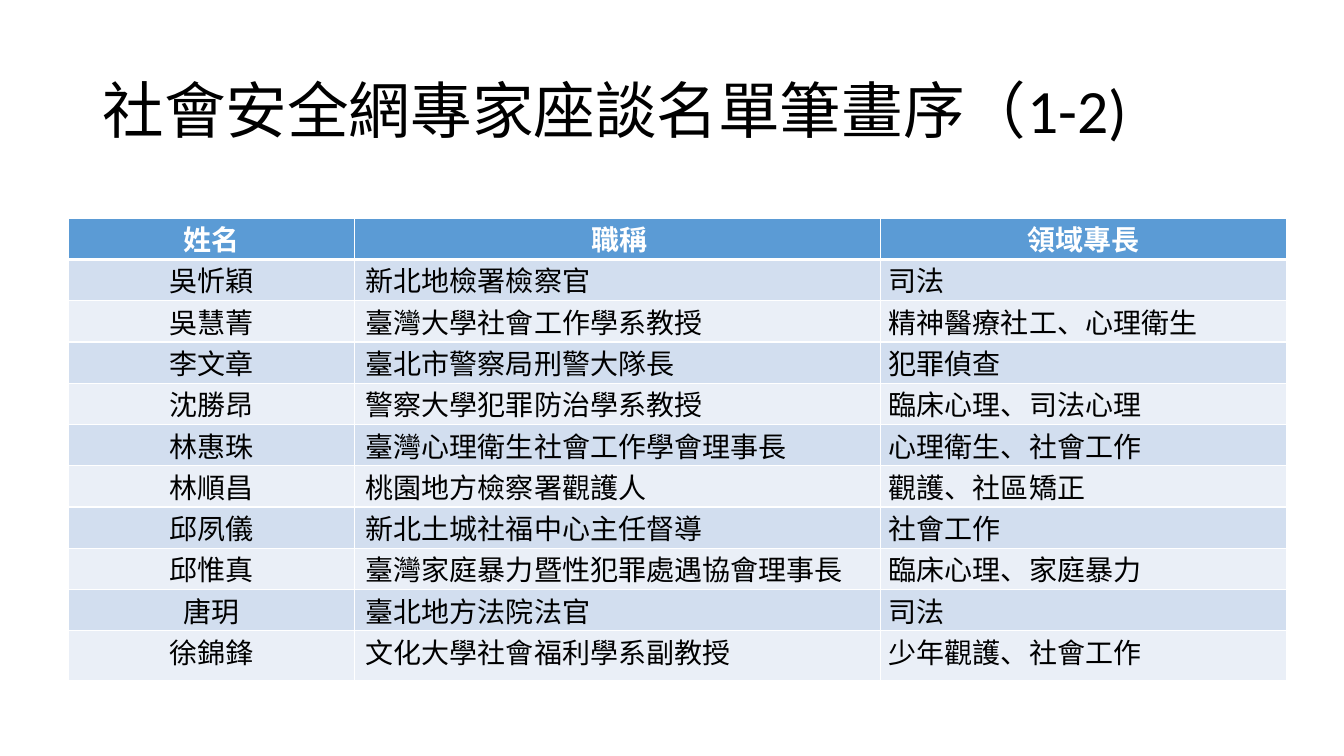
from typing import NamedTuple

from lxml import etree
from pptx import Presentation
from pptx import util as u
from pptx.dml.color import RGBColor
from pptx.enum import text
from pptx.oxml.ns import qn

TITLE = "社會安全網專家座談名單筆畫序（1-2)"
TABLE_FONT = "Noto Sans CJK SC"
WHITE, BLACK, HEADER_BLUE = "FFFFFF", "000000", "5B9BD5"
BANDS = ("D2DEEF", "EAEFF7")
ROW_HEIGHT, LAST_ROW_HEIGHT = 29.5, 35.3


class Column(NamedTuple):
    heading: str
    width: float
    indent: float
    align: text.PP_ALIGN


class Expert(NamedTuple):
    name: str
    post: str
    field: str


COLUMNS = (
    Column("姓名", 203.8, 0, text.PP_ALIGN.CENTER),
    Column("職稱", 375.8, 2.9, text.PP_ALIGN.LEFT),
    Column("領域專長", 290.2, 0.7, text.PP_ALIGN.LEFT),
)
EXPERTS = (
    Expert("吳忻穎", "新北地檢署檢察官", "司法"),
    Expert("吳慧菁", "臺灣大學社會工作學系教授", "精神醫療社工、心理衛生"),
    Expert("李文章", "臺北市警察局刑警大隊長", "犯罪偵查"),
    Expert("沈勝昂", "警察大學犯罪防治學系教授", "臨床心理、司法心理"),
    Expert("林惠珠", "臺灣心理衛生社會工作學會理事長", "心理衛生、社會工作"),
    Expert("林順昌", "桃園地方檢察署觀護人", "觀護、社區矯正"),
    Expert("邱夙儀", "新北土城社福中心主任督導", "社會工作"),
    Expert("邱惟真", "臺灣家庭暴力暨性犯罪處遇協會理事長", "臨床心理、家庭暴力"),
    Expert("唐玥", "臺北地方法院法官", "司法"),
    Expert("徐錦鋒", "文化大學社會福利學系副教授", "少年觀護、社會工作"),
)


def color(value: str) -> RGBColor:
    return RGBColor.from_string(value)


def add_run(p, words: str, size: float, font: str, ink: str, bold: bool = False):
    r = p.add_run()
    r.text = words
    r.font.size = u.Pt(size)
    r.font.name = font
    r.font.bold = bold
    r.font.color.rgb = color(ink)
    return r


def add_borders(cell, top: float, bottom: float) -> None:
    tc_pr = cell._tc.get_or_add_tcPr()
    sides = (("lnL", 1), ("lnR", 1), ("lnT", top), ("lnB", bottom))
    for position, (side, width) in enumerate(sides):
        ln = etree.Element(qn(f"a:{side}"), w=str(u.Pt(width)))
        fill = etree.SubElement(ln, qn("a:solidFill"))
        etree.SubElement(fill, qn("a:srgbClr"), val=WHITE)
        tc_pr.insert(position, ln)


def fill_cell(cell, words: str, row: int, column: Column) -> None:
    header = row == 0
    cell.margin_left = cell.margin_right = u.Pt(5.4)
    cell.margin_top = cell.margin_bottom = 0
    cell.vertical_anchor = text.MSO_ANCHOR.TOP
    cell.fill.solid()
    cell.fill.fore_color.rgb = color(HEADER_BLUE if header else BANDS[(row - 1) % 2])
    add_borders(cell, 3 if row == 1 else 1, 3 if header else 1)
    p = cell.text_frame.paragraphs[0]
    p.alignment = text.PP_ALIGN.CENTER if header else column.align
    p_pr = p._p.get_or_add_pPr()
    p_pr.set("marL", "0")
    p_pr.set("indent", str(u.Pt(column.indent)))
    r = add_run(p, words, 20, TABLE_FONT, WHITE if header else BLACK, header)
    etree.SubElement(r.font._element, qn("a:ea"), typeface=TABLE_FONT)


def add_title(slide) -> None:
    sp = slide.shapes.title
    sp.left, sp.top, sp.width, sp.height = map(u.Pt, (66, 28.8, 828, 104.4))
    tf = sp.text_frame
    tf.word_wrap = True
    tf.auto_size = text.MSO_AUTO_SIZE.NONE
    tf.vertical_anchor = text.MSO_ANCHOR.MIDDLE
    p = tf.paragraphs[0]
    p.alignment = text.PP_ALIGN.LEFT
    p.line_spacing = 0.9
    add_run(p, TITLE, 44, "Calibri", BLACK)


def add_expert_table(slide) -> None:
    rows = [tuple(c.heading for c in COLUMNS), *EXPERTS]
    width = sum(c.width for c in COLUMNS)
    height = ROW_HEIGHT * len(EXPERTS) + LAST_ROW_HEIGHT
    table = slide.shapes.add_table(
        len(rows), len(COLUMNS), u.Pt(49.2), u.Pt(155.8), u.Pt(width), u.Pt(height)
    ).table
    for index, column in enumerate(COLUMNS):
        table.columns[index].width = u.Pt(column.width)
    for row, entries in enumerate(rows):
        last = row == len(rows) - 1
        table.rows[row].height = u.Pt(LAST_ROW_HEIGHT if last else ROW_HEIGHT)
        for index, (words, column) in enumerate(zip(entries, COLUMNS)):
            fill_cell(table.cell(row, index), words, row, column)


def main() -> None:
    prs = Presentation()
    prs.slide_width, prs.slide_height = u.Pt(960), u.Pt(540)
    slide = prs.slides.add_slide(prs.slide_layouts[5])
    add_title(slide)
    add_expert_table(slide)
    prs.save("out.pptx")


if __name__ == "__main__":
    main()
